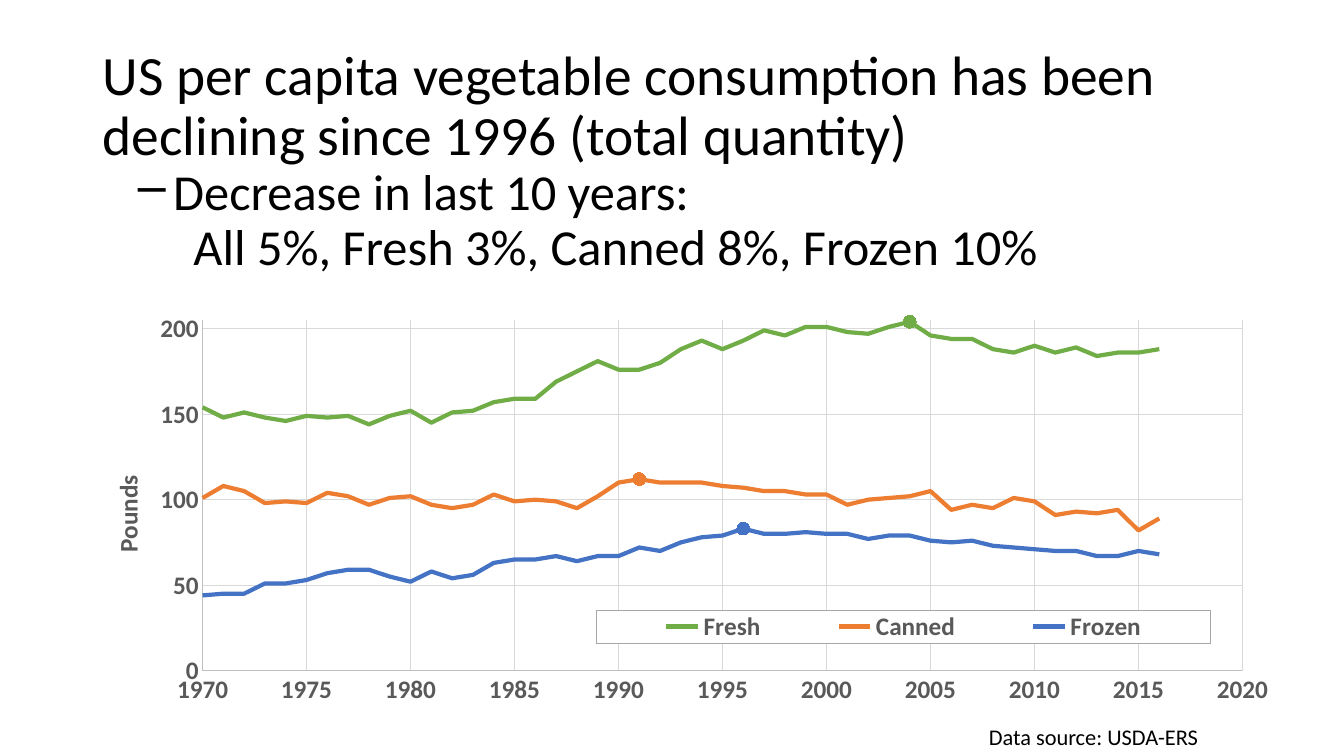
from dataclasses import dataclass

import pptx
import pptx.chart.data
import pptx.dml.color
import pptx.enum.chart
import pptx.enum.text
import pptx.oxml
import pptx.oxml.ns
import pptx.util
from pptx.util import Inches

COLORS = {
    "text": "000000", "axis_text": "595959", "axis_line": "BFBFBF", "grid": "D9D9D9",
    "legend_line": "A6A6A6", "background": "FFFFFF",
    "fresh": "70AD47", "canned": "ED7D31", "frozen": "4472C4",
}
FONT = "Calibri"
FIRST_YEAR = 1970


@dataclass
class Vegetable:
    name: str
    color: str
    pounds: list[int]


@dataclass
class HeadingLine:
    text: str
    size: float
    margin: float = 0
    indent: float = 0
    bullet: str = ""


VEGETABLES = [
    Vegetable("Fresh", "fresh", [
        154, 148, 151, 148, 146, 149, 148, 149, 144, 149, 152, 145, 151, 152, 157, 159,
        159, 169, 175, 181, 176, 176, 180, 188, 193, 188, 193, 199, 196, 201, 201, 198,
        197, 201, 204, 196, 194, 194, 188, 186, 190, 186, 189, 184, 186, 186, 188]),
    Vegetable("Canned", "canned", [
        101, 108, 105, 98, 99, 98, 104, 102, 97, 101, 102, 97, 95, 97, 103, 99,
        100, 99, 95, 102, 110, 112, 110, 110, 110, 108, 107, 105, 105, 103, 103, 97,
        100, 101, 102, 105, 94, 97, 95, 101, 99, 91, 93, 92, 94, 82, 89]),
    Vegetable("Frozen", "frozen", [
        44, 45, 45, 51, 51, 53, 57, 59, 59, 55, 52, 58, 54, 56, 63, 65,
        65, 67, 64, 67, 67, 72, 70, 75, 78, 79, 83, 80, 80, 81, 80, 80,
        77, 79, 79, 76, 75, 76, 73, 72, 71, 70, 70, 67, 67, 70, 68]),
]
HEADING = [
    HeadingLine("US per capita vegetable consumption has been declining since 1996 "
                "(total quantity)", 39.6),
    HeadingLine("Decrease in last 10 years:", 36, 0.7, -0.35, "–"),
    HeadingLine("All 5%, Fresh 3%, Canned 8%, Frozen 10%", 36, 0.9),
]


def rgb(key: str) -> pptx.dml.color.RGBColor:
    return pptx.dml.color.RGBColor.from_string(COLORS[key])


def style_font(font, size: float, color: str, bold: bool = False) -> None:
    font.name, font.size, font.bold = FONT, pptx.util.Pt(size), bold
    font.color.rgb = rgb(color)


def style_line(line, color: str, width: float) -> None:
    line.color.rgb = rgb(color)
    line.width = pptx.util.Pt(width)


def add_heading(slide) -> None:
    frame = slide.shapes.add_textbox(
        Inches(0.92), Inches(0.4), Inches(11.5), Inches(2.41)).text_frame
    frame.word_wrap = True
    frame.vertical_anchor = pptx.enum.text.MSO_ANCHOR.MIDDLE
    frame.text = "\n".join(line.text for line in HEADING)
    for paragraph, line in zip(frame.paragraphs, HEADING):
        paragraph.line_spacing = 0.9
        properties = paragraph._p.get_or_add_pPr()
        properties.set("marL", str(Inches(line.margin)))
        properties.set("indent", str(Inches(line.indent)))
        if line.bullet:
            bullet = pptx.oxml.parse_xml(
                f'<a:buChar {pptx.oxml.ns.nsdecls("a")} char="{line.bullet}"/>')
            properties.append(bullet)
        style_font(paragraph.runs[0].font, line.size, "text")


def place(parent, x: float, y: float, w: float = 0, h: float = 0, inner: bool = False) -> None:
    """Give a chart part a manual layout, in fractions of the chart."""
    for old in parent.xpath("c:layout"):
        parent.remove(old)
    target = '<c:layoutTarget val="inner"/>' if inner else ""
    size = f'<c:w val="{w}"/><c:h val="{h}"/>' if w else ""
    layout = pptx.oxml.parse_xml(
        f'<c:layout {pptx.oxml.ns.nsdecls("c")}><c:manualLayout>{target}'
        f'<c:xMode val="edge"/><c:yMode val="edge"/><c:x val="{x}"/><c:y val="{y}"/>'
        f'{size}</c:manualLayout></c:layout>')
    before = parent.xpath("c:tx | c:legendPos")
    if before:
        before[-1].addnext(layout)
    else:
        parent.insert(0, layout)


def style_axis(axis, low: float, high: float, step: float) -> None:
    axis.minimum_scale, axis.maximum_scale, axis.major_unit = low, high, step
    axis.major_tick_mark = axis.minor_tick_mark = pptx.enum.chart.XL_TICK_MARK.NONE
    axis.has_major_gridlines = True
    style_line(axis.major_gridlines.format.line, "grid", 0.75)
    style_line(axis.format.line, "axis_line", 0.75)
    style_font(axis.tick_labels.font, 18, "axis_text", True)
    axis.tick_labels.number_format = "0"
    axis.tick_labels.number_format_is_linked = False


def style_series(series, vegetable: Vegetable) -> None:
    """Colour the line and mark its peak year."""
    style_line(series.format.line, vegetable.color, 3)
    series.marker.style = pptx.enum.chart.XL_MARKER_STYLE.NONE
    peak = series.points[vegetable.pounds.index(max(vegetable.pounds))]
    style_line(peak.format.line, vegetable.color, 3)
    peak.marker.style = pptx.enum.chart.XL_MARKER_STYLE.CIRCLE
    peak.marker.size = 9
    peak.marker.format.fill.solid()
    peak.marker.format.fill.fore_color.rgb = rgb(vegetable.color)
    style_line(peak.marker.format.line, vegetable.color, 0.75)


def add_legend(chart) -> None:
    chart.has_legend = True
    chart.legend.position = pptx.enum.chart.XL_LEGEND_POSITION.BOTTOM
    chart.legend.include_in_layout = False
    style_font(chart.legend.font, 18, "axis_text", True)
    legend = chart.element.xpath(".//c:legend")[0]
    place(legend, 0.436, 0.763, 0.483, 0.081)
    legend.xpath("c:overlay")[0].addnext(pptx.oxml.parse_xml(
        f'<c:spPr {pptx.oxml.ns.nsdecls("c", "a")}>'
        f'<a:solidFill><a:srgbClr val="{COLORS["background"]}"/></a:solidFill>'
        f'<a:ln w="9525"><a:solidFill><a:srgbClr val="{COLORS["legend_line"]}"/>'
        '</a:solidFill></a:ln></c:spPr>'))


def add_consumption_chart(slide) -> None:
    data = pptx.chart.data.XyChartData()
    for vegetable in VEGETABLES:
        points = data.add_series(vegetable.name)
        for year, pounds in enumerate(vegetable.pounds, FIRST_YEAR):
            points.add_data_point(year, pounds)
    chart = slide.shapes.add_chart(
        pptx.enum.chart.XL_CHART_TYPE.XY_SCATTER_LINES_NO_MARKERS,
        Inches(0.42), Inches(2.97), Inches(12.61), Inches(4.04), data).chart
    style_font(chart.font, 18, "text", True)
    chart.has_title = False
    chart.plots[0].vary_by_categories = False
    for series, vegetable in zip(chart.plots[0].series, VEGETABLES):
        style_series(series, vegetable)
    style_axis(chart.category_axis, FIRST_YEAR, 2020, 5)
    style_axis(chart.value_axis, 0, 205, 50)
    unit = chart.value_axis.axis_title.text_frame
    unit.text = "Pounds"
    style_font(unit.paragraphs[0].runs[0].font, 18, "axis_text", True)
    unit_title = chart.element.xpath(".//c:valAx/c:title")[0]
    unit_title.xpath(".//a:bodyPr")[0].set("rot", "-5400000")
    place(unit_title, 0.05, 0.42)
    place(chart.element.xpath(".//c:plotArea")[0], 0.126, 0.051, 0.818, 0.861, inner=True)
    add_legend(chart)


def add_data_source(slide) -> None:
    frame = slide.shapes.add_textbox(
        Inches(9.71), Inches(7.13), Inches(3.43), Inches(0.37)).text_frame
    frame.word_wrap = True
    frame.text = "Data source: USDA-ERS"
    style_font(frame.paragraphs[0].runs[0].font, 16, "text")


def main() -> None:
    deck = pptx.Presentation()
    deck.slide_width, deck.slide_height = Inches(13.33), Inches(7.5)
    slide = deck.slides.add_slide(deck.slide_layouts[6])
    add_heading(slide)
    add_consumption_chart(slide)
    add_data_source(slide)
    deck.save("out.pptx")


if __name__ == "__main__":
    main()
